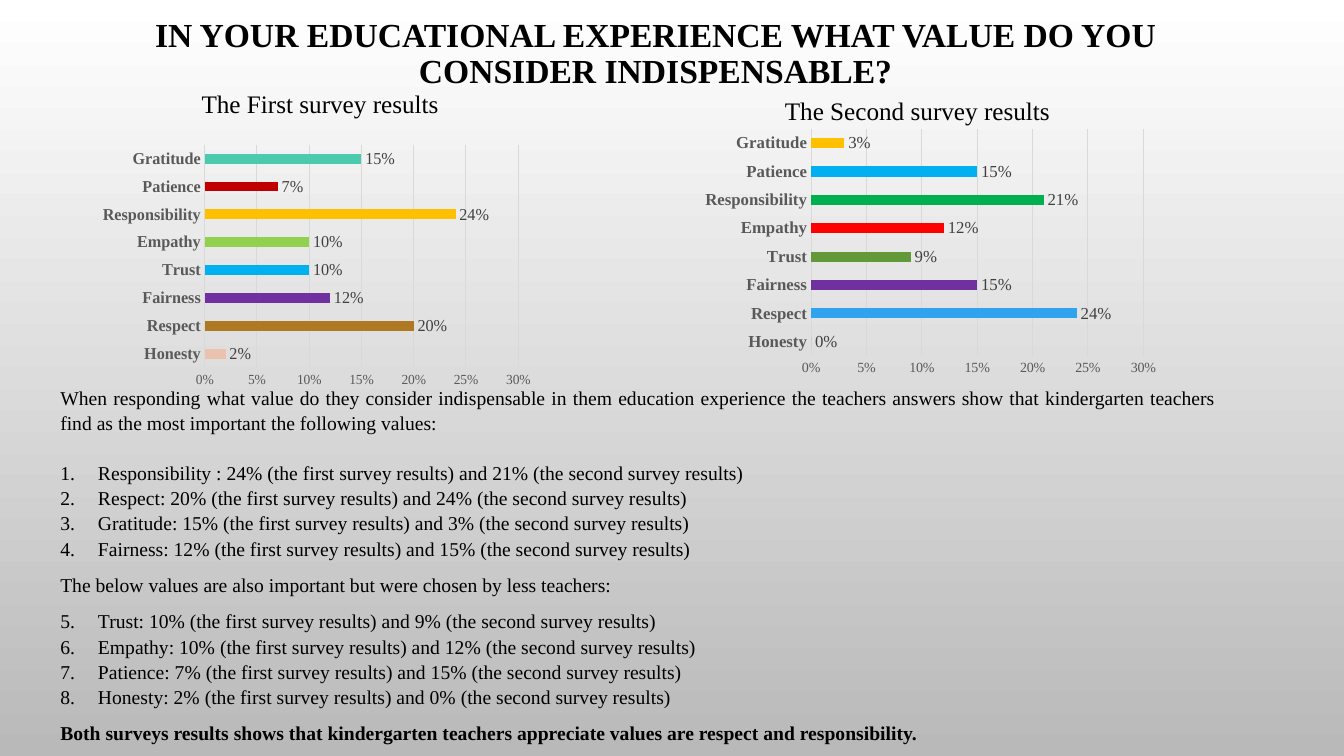
from dataclasses import dataclass
from typing import Any

from lxml.etree import SubElement
from pptx import Presentation
from pptx.chart.data import CategoryChartData
from pptx.dml.color import RGBColor
from pptx.enum.chart import XL_CHART_TYPE, XL_LABEL_POSITION, XL_TICK_MARK
from pptx.enum.text import MSO_ANCHOR, PP_ALIGN
from pptx.oxml import parse_xml
from pptx.oxml.ns import nsdecls, qn
from pptx.util import Cm, Pt

FONT = "Times New Roman"
WHITE = RGBColor(0xFF, 0xFF, 0xFF)
SILVER = RGBColor(0xB9, 0xB9, 0xB9)
BLACK = RGBColor(0, 0, 0)
LABEL_GRAY = RGBColor(0x40, 0x40, 0x40)
AXIS_GRAY = RGBColor(0x59, 0x59, 0x59)
GRID_GRAY = RGBColor(0xD9, 0xD9, 0xD9)
PEACH = RGBColor(0xEB, 0xC2, 0xAD)
BROWN = RGBColor(0xAF, 0x78, 0x23)
PURPLE = RGBColor(0x70, 0x30, 0xA0)
SKY = RGBColor(0x00, 0xB0, 0xF0)
LIME = RGBColor(0x92, 0xD0, 0x50)
AMBER = RGBColor(0xFF, 0xC0, 0x00)
DARK_RED = RGBColor(0xC0, 0x00, 0x00)
TEAL = RGBColor(0x4B, 0xCA, 0xAD)
BLUE = RGBColor(0x2F, 0xA3, 0xEE)
OLIVE = RGBColor(0x64, 0x99, 0x39)
RED = RGBColor(0xFF, 0x00, 0x00)
GREEN = RGBColor(0x00, 0xB0, 0x50)

VALUES = ("Honesty", "Respect", "Fairness", "Trust",
          "Empathy", "Responsibility", "Patience", "Gratitude")


@dataclass(frozen=True)
class Box:
    left: float
    top: float
    width: float
    height: float

    def lengths(self) -> tuple[Cm, Cm, Cm, Cm]:
        return Cm(self.left), Cm(self.top), Cm(self.width), Cm(self.height)


@dataclass(frozen=True)
class Survey:
    heading: str
    heading_box: Box
    chart_box: Box
    plot: dict[str, float]
    percents: tuple[int, ...]
    colors: tuple[RGBColor, ...]


@dataclass(frozen=True)
class Line:
    text: str
    number: int = 0
    space_after: float = 0
    bold: bool = False


SURVEYS = (
    Survey("The First survey results", Box(4.83, 2.11, 7.92, 1.02),
           Box(2.59, 3.33, 11.23, 6.43),
           {"x": 0.2, "y": 0.05, "w": 0.73, "h": 0.88},
           (2, 20, 12, 10, 10, 24, 7, 15),
           (PEACH, BROWN, PURPLE, SKY, LIME, AMBER, DARK_RED, TEAL)),
    Survey("The Second survey results", Box(19.53, 2.29, 7.92, 1.02),
           Box(17.45, 3.12, 11.96, 6.5),
           {"x": 0.25, "y": 0.02, "w": 0.7, "h": 0.88},
           (0, 24, 15, 9, 12, 21, 15, 3),
           (BLUE, BLUE, PURPLE, OLIVE, RED, GREEN, SKY, AMBER)),
)

LINES = (
    Line("When responding what value do they consider indispensable in them "
         "education experience the teachers answers show that kindergarten "
         "teachers find as the most important the following values:", space_after=18),
    Line("Responsibility : 24% (the first survey results) and 21% (the second survey results)", 1),
    Line("Respect: 20% (the first survey results) and 24% (the second survey results)", 2),
    Line("Gratitude: 15% (the first survey results) and 3% (the second survey results)", 3),
    Line("Fairness: 12% (the first survey results) and 15% (the second survey results)", 4, 8),
    Line("The below values are also important but were chosen by less teachers:", space_after=8),
    Line("Trust: 10% (the first survey results) and 9% (the second survey results)", 5),
    Line("Empathy: 10% (the first survey results) and 12% (the second survey results)", 6),
    Line("Patience: 7% (the first survey results) and 15% (the second survey results)", 7),
    Line("Honesty: 2% (the first survey results) and 0% (the second survey results)", 8, 8),
    Line("Both surveys results shows that kindergarten teachers appreciate values "
         "are respect and responsibility.", space_after=8, bold=True),
)


def apply(target: Any, formats: dict[str, Any]) -> None:
    for name, value in formats.items():
        setattr(target, name, value)


def set_font(font: Any, size: float, color: RGBColor, bold: bool = False) -> None:
    apply(font, {"name": FONT, "size": Pt(size), "bold": bold})
    font.color.rgb = color


def set_line(line: Any) -> None:
    line.color.rgb = GRID_GRAY
    line.width = Pt(0.75)


def add_number(paragraph: Any, number: int) -> None:
    """Give the paragraph a hanging indent and its place in the numbered list."""
    properties = paragraph._p.get_or_add_pPr()
    properties.set("marL", str(Cm(0.95)))
    properties.set("indent", str(-Cm(0.95)))
    start = 1 if number < 5 else 5
    SubElement(properties, qn("a:buFont"), typeface="+mj-lt")
    SubElement(properties, qn("a:buAutoNum"), type="arabicPeriod", startAt=str(start))


def add_text(slide: Any, box: Box, lines: tuple[Line, ...], size: float,
             alignment: PP_ALIGN, spacing: float = 1.0,
             anchor: MSO_ANCHOR = MSO_ANCHOR.TOP) -> None:
    frame = slide.shapes.add_textbox(*box.lengths()).text_frame
    apply(frame, {"word_wrap": True, "vertical_anchor": anchor})
    for index, line in enumerate(lines):
        paragraph = frame.add_paragraph() if index else frame.paragraphs[0]
        if line.number:
            add_number(paragraph, line.number)
        apply(paragraph, {"text": line.text, "alignment": alignment,
                          "line_spacing": spacing, "space_after": Pt(line.space_after)})
        set_font(paragraph.font, size, BLACK, line.bold)


def place_plot(chart: Any, plot: dict[str, float]) -> None:
    """Fix the inner plot area, in fractions of the chart."""
    area = chart._chartSpace.chart.plotArea
    for layout in area.findall(qn("c:layout")):
        area.remove(layout)
    modes = "".join(f'<c:{side}Mode val="edge"/>' for side in "xy")
    sizes = "".join(f'<c:{side} val="{value}"/>' for side, value in plot.items())
    area.insert(0, parse_xml(
        f'<c:layout {nsdecls("c")}><c:manualLayout><c:layoutTarget val="inner"/>'
        f'{modes}{sizes}</c:manualLayout></c:layout>'))


def add_survey_chart(slide: Any, survey: Survey) -> None:
    data = CategoryChartData(number_format="0%")
    data.categories = VALUES
    data.add_series("Series 1", [percent / 100 for percent in survey.percents])
    chart = slide.shapes.add_chart(
        XL_CHART_TYPE.BAR_CLUSTERED, *survey.chart_box.lengths(), data).chart
    apply(chart, {"has_title": False, "has_legend": False})
    set_font(chart.font, 12, BLACK)
    place_plot(chart, survey.plot)

    for axis, size, bold in ((chart.category_axis, 12, True), (chart.value_axis, 10, False)):
        apply(axis, {"major_tick_mark": XL_TICK_MARK.NONE,
                     "minor_tick_mark": XL_TICK_MARK.NONE})
        set_font(axis.tick_labels.font, size, AXIS_GRAY, bold)
    set_line(chart.category_axis.format.line)
    value_axis = chart.value_axis
    apply(value_axis, {"minimum_scale": 0, "maximum_scale": 0.3, "major_unit": 0.05})
    apply(value_axis.tick_labels, {"number_format": "0%", "number_format_is_linked": False})
    value_axis.format.line.fill.background()
    set_line(value_axis.major_gridlines.format.line)

    plot = chart.plots[0]
    apply(plot, {"gap_width": 182, "vary_by_categories": False, "has_data_labels": True})
    apply(plot.data_labels, {"show_value": True, "position": XL_LABEL_POSITION.OUTSIDE_END,
                             "number_format": "0%", "number_format_is_linked": False})
    set_font(plot.data_labels.font, 12, LABEL_GRAY)
    for index, color in enumerate(survey.colors):
        fill = plot.series[0].points[index].format.fill
        fill.solid()
        fill.fore_color.rgb = color


def main() -> None:
    presentation = Presentation()
    apply(presentation, {"slide_width": Cm(33.87), "slide_height": Cm(19.05)})
    slide = presentation.slides.add_slide(presentation.slide_layouts[6])
    background = slide.background.fill
    background.gradient()
    background.gradient_angle = 270
    for stop, color in zip(background.gradient_stops, (WHITE, SILVER)):
        stop.color.rgb = color

    title = Line("IN YOUR EDUCATIONAL EXPERIENCE WHAT VALUE DO YOU CONSIDER INDISPENSABLE?",
                 bold=True)
    add_text(slide, Box(2.13, 0.25, 28.78, 2.24), (title,), 24,
             PP_ALIGN.CENTER, 0.9, MSO_ANCHOR.MIDDLE)
    add_text(slide, Box(1.27, 9.55, 29.64, 9.42), LINES, 14, PP_ALIGN.JUSTIFY, 1.07)
    for survey in SURVEYS:
        add_survey_chart(slide, survey)
        add_text(slide, survey.heading_box, (Line(survey.heading),), 18, PP_ALIGN.LEFT)
    presentation.save("out.pptx")


if __name__ == "__main__":
    main()
